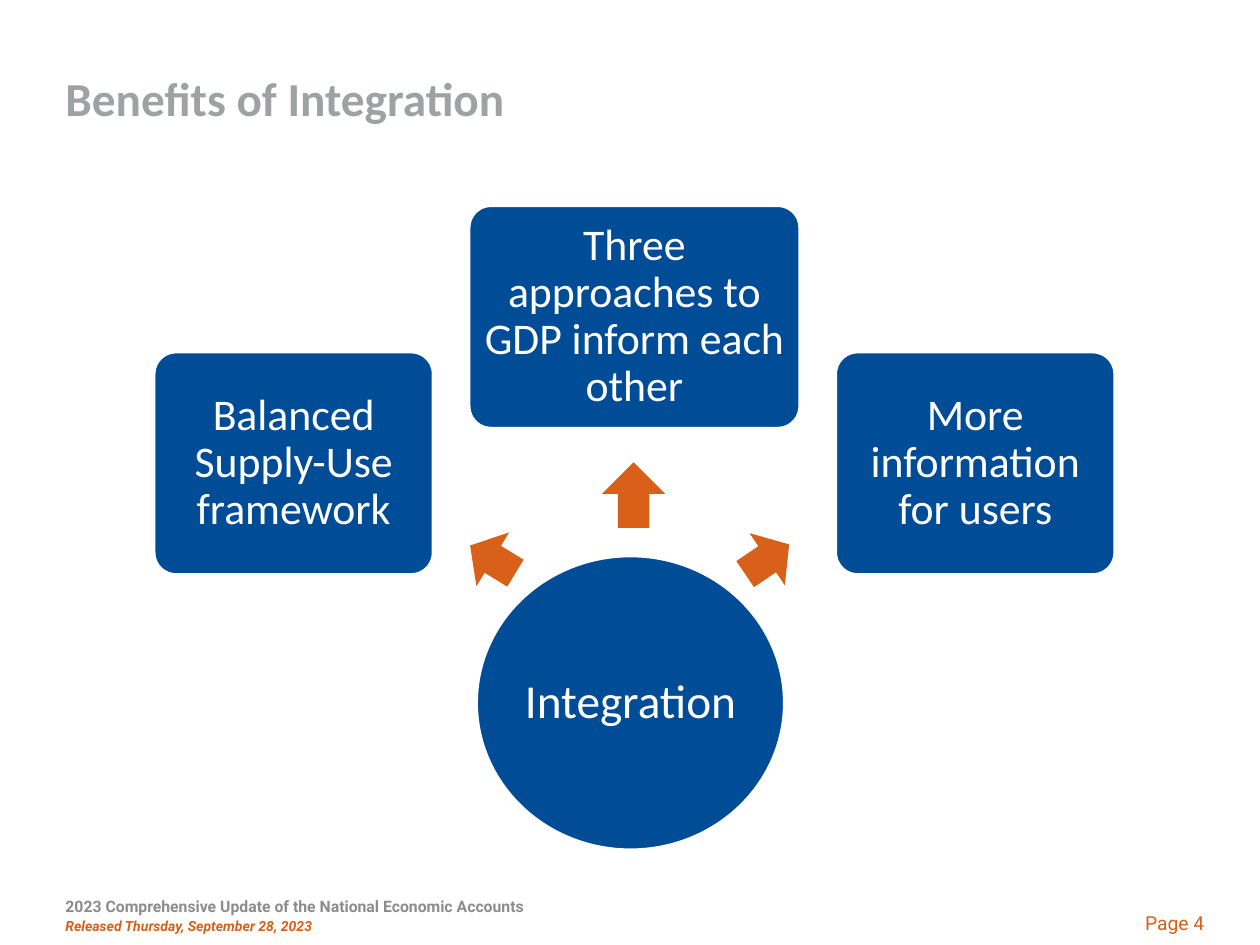
from pptx import Presentation
from pptx.dml.color import RGBColor
from pptx.enum.shapes import MSO_SHAPE
from pptx.enum.text import MSO_ANCHOR, PP_ALIGN
from pptx.util import Cm, Pt

ROUNDED, OVAL, UP_ARROW = MSO_SHAPE.ROUNDED_RECTANGLE, MSO_SHAPE.OVAL, MSO_SHAPE.UP_ARROW
TOP, MIDDLE = MSO_ANCHOR.TOP, MSO_ANCHOR.MIDDLE
LEFT, CENTER, RIGHT = PP_ALIGN.LEFT, PP_ALIGN.CENTER, PP_ALIGN.RIGHT

BLUE = RGBColor(0x00, 0x4C, 0x97)
ORANGE = RGBColor(0xD8, 0x60, 0x18)
TITLE_GRAY = RGBColor(0x9E, 0xA2, 0xA2)
FOOTER_GRAY = RGBColor(0x8C, 0x8C, 0x8C)
WHITE = RGBColor(0xFF, 0xFF, 0xFF)


class Deck:
    heading_font = "Calibri"
    footer_font = "Roboto"

    def __init__(self, width, height):
        self.presentation = Presentation()
        self.presentation.slide_width = Cm(width)
        self.presentation.slide_height = Cm(height)
        self.slide = self.presentation.slides.add_slide(self.presentation.slide_layouts[6])

    def style(self, paragraph, font, size, color, align=LEFT, bold=False, italic=False):
        paragraph.alignment = align
        for run in paragraph.runs:
            run.font.name = font
            run.font.size = Pt(size)
            run.font.color.rgb = color
            run.font.bold = bold
            run.font.italic = italic

    def text(self, box, lines, anchor=MIDDLE):
        frame = self.slide.shapes.add_textbox(*map(Cm, box)).text_frame
        frame.word_wrap = True
        frame.vertical_anchor = anchor
        frame.text = "\n".join(wording for wording, _ in lines)
        for paragraph, (_, look) in zip(frame.paragraphs, lines):
            self.style(paragraph, **look)
        return frame

    def shape(self, kind, box, fill):
        shape = self.slide.shapes.add_shape(kind, *map(Cm, box))
        shape.shadow.inherit = False
        shape.fill.solid()
        shape.fill.fore_color.rgb = fill
        shape.line.fill.background()
        return shape

    def node(self, kind, box, wording, size, margin):
        node = self.shape(kind, box, BLUE)
        node.line.color.rgb = WHITE
        node.line.width = Pt(2)
        if kind == ROUNDED:
            node.adjustments[0] = 0.1
        frame = node.text_frame
        frame.word_wrap = True
        frame.vertical_anchor = MIDDLE
        frame.margin_left = frame.margin_right = Cm(margin)
        frame.margin_top = frame.margin_bottom = Cm(margin)
        frame.text = wording
        frame.paragraphs[0].line_spacing = 0.9
        self.style(frame.paragraphs[0], self.heading_font, size, WHITE, CENTER)

    def arrow(self, box, rotation):
        self.shape(UP_ARROW, box, ORANGE).rotation = rotation


def main():
    deck = Deck(25.4, 19.05)

    page = dict(font=deck.footer_font, size=11, color=ORANGE, align=RIGHT)
    deck.text((21.79, 18.19, 2.74, 0.81), [("Page 4", page)])

    heading = dict(font=deck.heading_font, size=27, color=TITLE_GRAY, bold=True)
    title = deck.text((1.07, 0.64, 19.33, 2.54), [("Benefits of Integration", heading)])
    title.margin_bottom = 0

    event = dict(font=deck.footer_font, size=9, color=FOOTER_GRAY, bold=True)
    release = dict(font=deck.footer_font, size=8, color=ORANGE, bold=True, italic=True)
    footer = deck.text((1.07, 17.96, 18.42, 1.09), [
        ("2023 Comprehensive Update of the National Economic Accounts", event),
        ("Released Thursday, September 28, 2023", release),
    ], TOP)
    for paragraph in footer.paragraphs:
        paragraph.space_after = Pt(1.1)

    deck.node(OVAL, (9.6, 11.2, 6.22, 5.94), "Integration", 27, 0.05)

    benefits = [
        (3.1, 7.09, 5.64, "Balanced Supply-Use framework"),
        (9.45, 4.14, 6.68, "Three approaches to GDP inform each other"),
        (16.84, 7.09, 5.64, "More information for users"),
    ]
    for left, top, width, wording in benefits:
        deck.node(ROUNDED, (left, top, width, 4.5), wording, 25, 0.13)

    arrows = [(9.3, 10.74, 1.07, 301.3), (12.14, 9.32, 1.32, 0), (14.83, 10.74, 1.07, 55.9)]
    for left, top, height, rotation in arrows:
        deck.arrow((left, top, 1.27, height), rotation)

    deck.presentation.save("out.pptx")


if __name__ == "__main__":
    main()
